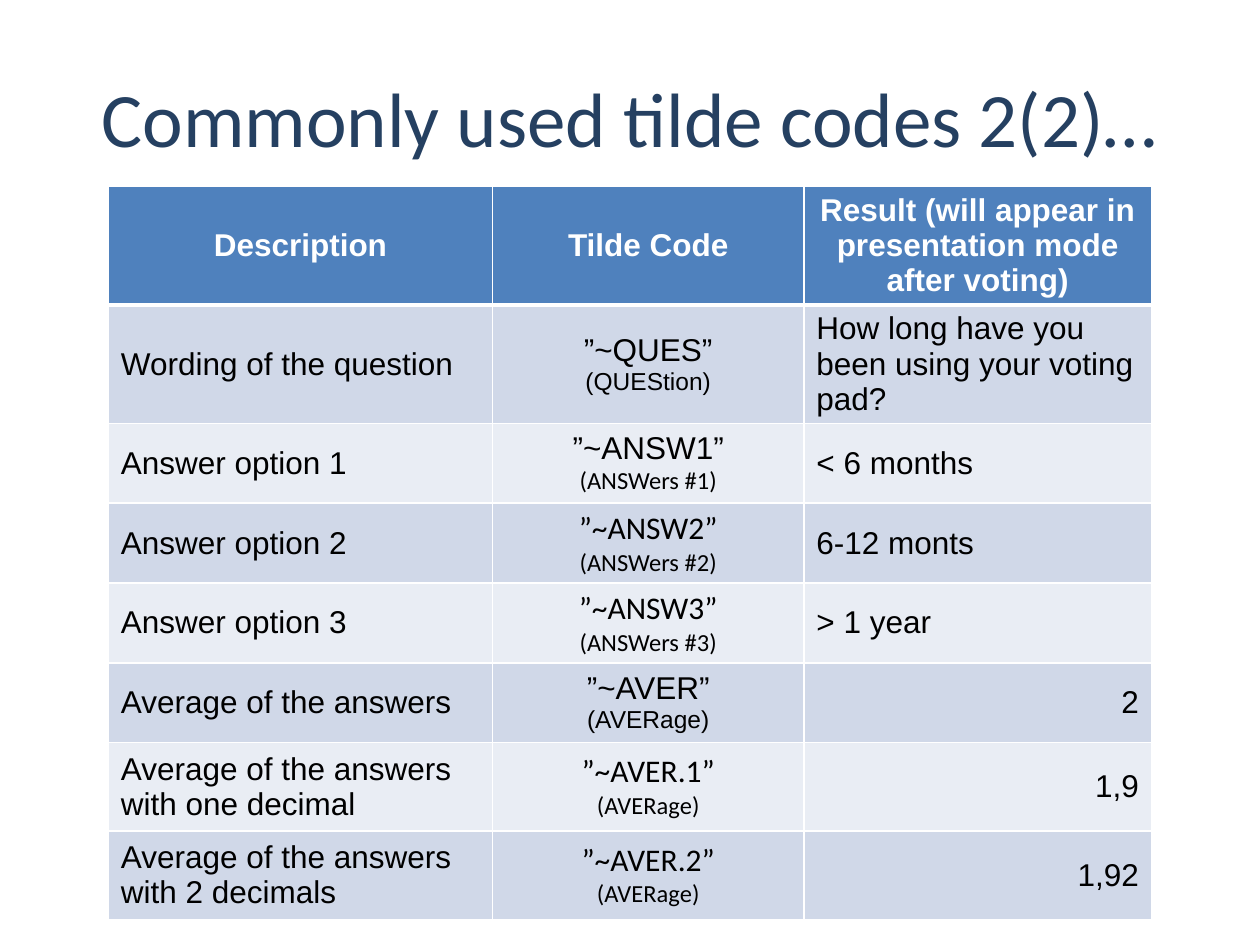
from lxml.etree import SubElement
from pptx import Presentation
from pptx.dml.color import RGBColor
from pptx.enum.text import MSO_ANCHOR as Anchor, PP_ALIGN as Align
from pptx.oxml.ns import qn
from pptx.util import Inches, Pt

WHITE, BLACK, NAVY = "FFFFFF", "000000", "254061"
HEADER_FILL, BANDS = "4F81BD", ("D0D8E8", "E9EDF4")
SANS, TITLE_FONT = "Arial", "Calibri"

COLUMN_WIDTHS = (3.05, 2.47, 2.76)
ROW_HEIGHTS = (0.7, 0.63, 0.63, 0.63, 0.63, 0.63, 0.7, 0.7)
HEADERS = (
    "Description",
    "Tilde Code",
    "Result (will appear in presentation mode after voting)",
)
# Description, code, code font, explanation, explanation font, result, result alignment
ROWS = (
    ("Wording of the question", "”~QUES”", SANS, "(QUEStion)", SANS,
     "How long have you been using your voting pad?", Align.LEFT),
    ("Answer option 1", "”~ANSW1”", SANS, "(ANSWers #1)", TITLE_FONT, "< 6 months", Align.LEFT),
    ("Answer option 2", "”~ANSW2”", TITLE_FONT, "(ANSWers #2)", TITLE_FONT, "6-12 monts", Align.LEFT),
    ("Answer option 3", "”~ANSW3”", TITLE_FONT, "(ANSWers #3)", TITLE_FONT, "> 1 year", Align.LEFT),
    ("Average of the answers", "”~AVER”", SANS, "(AVERage)", SANS, "2", Align.RIGHT),
    ("Average of the answers with one decimal", "”~AVER.1”", TITLE_FONT,
     "(AVERage)", TITLE_FONT, "1,9", Align.RIGHT),
    ("Average of the answers with 2 decimals", "”~AVER.2”", TITLE_FONT,
     "(AVERage)", TITLE_FONT, "1,92", Align.RIGHT),
)


def color(hex_string):
    return RGBColor.from_string(hex_string)


def write_line(paragraph, text, align, size=18, font=SANS, ink=BLACK, bold=False):
    paragraph.alignment = align
    run = paragraph.add_run()
    run.text = text
    run.font.size = Pt(size)
    run.font.name = font
    run.font.bold = bold
    run.font.color.rgb = color(ink)


def style_cell(cell, fill, bottom_width=1, top_width=1, margin=0.05):
    cell.vertical_anchor = Anchor.MIDDLE
    cell.margin_top = cell.margin_bottom = Inches(margin)
    # Borders come before the fill in the cell properties
    properties = cell._tc.get_or_add_tcPr()
    widths = {"a:lnL": 1, "a:lnR": 1, "a:lnT": top_width, "a:lnB": bottom_width}
    for tag, width in widths.items():
        line = SubElement(properties, qn(tag), w=str(Pt(width)))
        solid = SubElement(line, qn("a:solidFill"))
        SubElement(solid, qn("a:srgbClr"), val=WHITE)
    cell.fill.solid()
    cell.fill.fore_color.rgb = color(fill)


def add_title(slide, left, top, width, height):
    box = slide.shapes.add_textbox(left, top, width, height)
    frame = box.text_frame
    frame.word_wrap = True
    frame.vertical_anchor = Anchor.MIDDLE
    write_line(frame.paragraphs[0], "Commonly used tilde codes 2(2)…",
               Align.CENTER, 44, TITLE_FONT, NAVY)


def add_code_table(slide, left, top, width, height):
    table = slide.shapes.add_table(
        len(ROW_HEIGHTS), len(COLUMN_WIDTHS), left, top, width, height).table
    for column, column_width in zip(table.columns, COLUMN_WIDTHS):
        column.width = Inches(column_width)
    for row, row_height in zip(table.rows, ROW_HEIGHTS):
        row.height = Inches(row_height)

    # Header row, with tight margins for its three lines
    for cell, header in zip(table.rows[0].cells, HEADERS):
        style_cell(cell, HEADER_FILL, bottom_width=3, margin=0.02)
        write_line(cell.text_frame.paragraphs[0], header, Align.CENTER, ink=WHITE, bold=True)

    # Banded body rows; the first also holds three lines
    for index, content in enumerate(ROWS):
        description, code, code_font, note, note_font, result, result_align = content
        cells = list(table.rows[index + 1].cells)
        top_width, margin = (3, 0.02) if index == 0 else (1, 0.05)
        for cell in cells:
            style_cell(cell, BANDS[index % 2], top_width=top_width, margin=margin)
        description_frame, code_frame, result_frame = [cell.text_frame for cell in cells]
        write_line(description_frame.paragraphs[0], description, Align.LEFT)
        write_line(code_frame.paragraphs[0], code, Align.CENTER, font=code_font)
        write_line(code_frame.add_paragraph(), note, Align.CENTER, 14, note_font)
        write_line(result_frame.paragraphs[0], result, result_align)


def main():
    presentation = Presentation()
    presentation.slide_width = Inches(10)
    presentation.slide_height = Inches(7.5)
    slide = presentation.slides.add_slide(presentation.slide_layouts[6])
    add_title(slide, Inches(0.5), Inches(0.3), Inches(9), Inches(1.25))
    add_code_table(slide, Inches(0.86), Inches(1.48), Inches(8.28), Inches(5.63))
    presentation.save("out.pptx")


if __name__ == "__main__":
    main()
